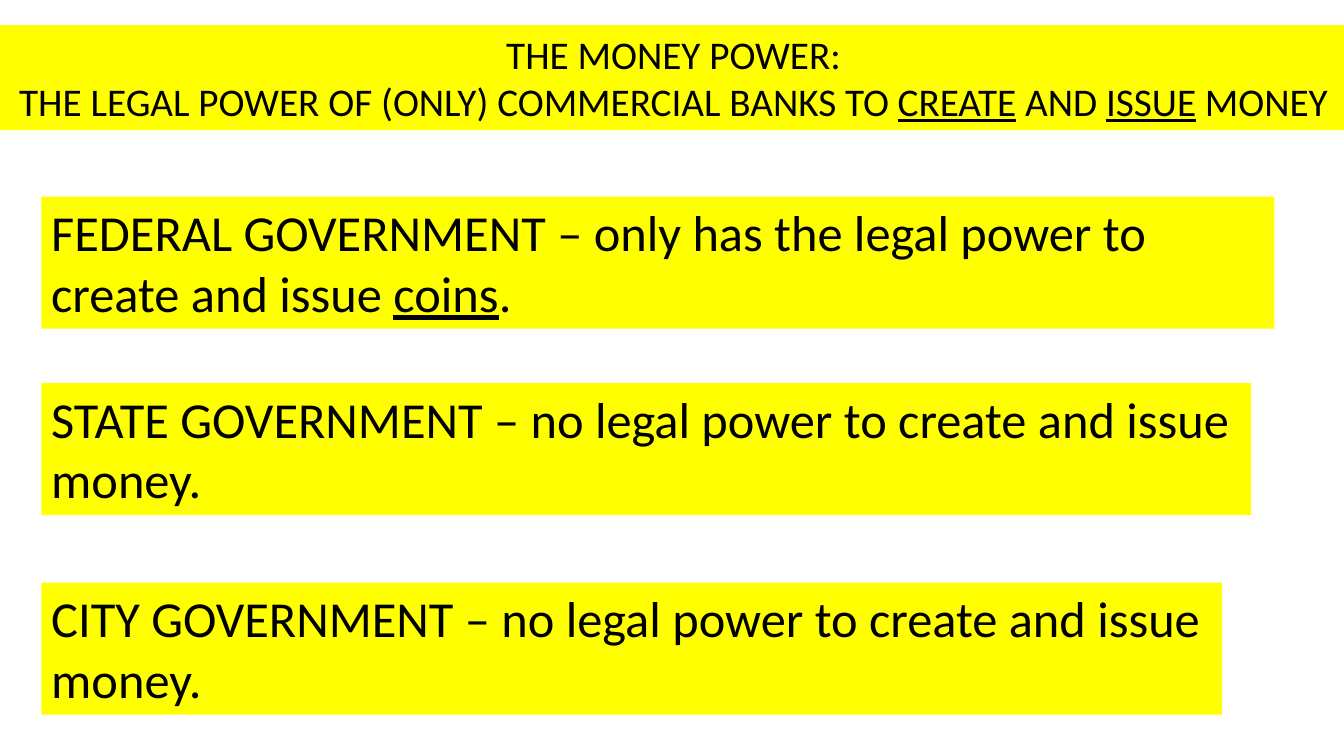
from pptx import Presentation
from pptx.dml.color import RGBColor
from pptx.enum.text import MSO_ANCHOR, MSO_AUTO_SIZE, PP_ALIGN
from pptx.util import Inches, Pt

THEME = {
    "font": "Calibri",
    "text": RGBColor(0, 0, 0),
    "highlight": RGBColor(255, 255, 0),
    "title_size": Pt(28),
    "body_size": Pt(36),
}

# Each paragraph is a list of spans; a span is its text and whether it is underlined.
TITLE = [
    [("THE MONEY POWER:", False)],
    [
        ("THE LEGAL POWER OF (ONLY) COMMERCIAL BANKS TO ", False),
        ("CREATE", True),
        (" AND ", False),
        ("ISSUE", True),
        (" MONEY", False),
    ],
]
FEDERAL = [[
    ("FEDERAL GOVERNMENT – only has the legal power to create and issue ", False),
    ("coins", True),
    (".", False),
]]
STATE, CITY = [
    [[(f"{level} GOVERNMENT – no legal power to create and issue", False)],
     [("money.", False)]]
    for level in ("STATE", "CITY")
]
LEFT, HEIGHT = 0.41, 1.31
# top, width, wraps, paragraphs
GOVERNMENTS = [
    (1.95, 12.23, True, FEDERAL),
    (3.8, 12, False, STATE),
    (5.78, 11.71, False, CITY),
]


def place(box, left, top, width, height):
    """Set the position and size of a box, given in inches."""
    bounds = {"left": left, "top": top, "width": width, "height": height}
    for name, value in bounds.items():
        setattr(box, name, Inches(value))


def write(box, paragraphs, size, align, wrap=True):
    """Fill a box with the highlight colour and its formatted paragraphs."""
    box.fill.solid()
    box.fill.fore_color.rgb = THEME["highlight"]
    frame = box.text_frame
    frame_format = {
        "word_wrap": wrap,
        "auto_size": MSO_AUTO_SIZE.SHAPE_TO_FIT_TEXT,
        "vertical_anchor": MSO_ANCHOR.TOP,
    }
    for name, value in frame_format.items():
        setattr(frame, name, value)
    for index, spans in enumerate(paragraphs):
        para = frame.add_paragraph() if index else frame.paragraphs[0]
        para.alignment = align
        for text, underlined in spans:
            span = para.add_run()
            span.text = text
            span.font.color.rgb = THEME["text"]
            font_format = {"name": THEME["font"], "size": size, "underline": underlined}
            for name, value in font_format.items():
                setattr(span.font, name, value)


deck = Presentation()
deck.slide_width, deck.slide_height = Inches(13.33), Inches(7.5)
slide = deck.slides.add_slide(deck.slide_layouts.get_by_name("Title Only"))

title = slide.shapes.title
place(title, 0, 0.25, 13.36, 1.04)
write(title, TITLE, THEME["title_size"], PP_ALIGN.CENTER)

for top, width, wrap, paragraphs in GOVERNMENTS:
    box = slide.shapes.add_textbox(0, 0, 0, 0)
    place(box, LEFT, top, width, HEIGHT)
    write(box, paragraphs, THEME["body_size"], PP_ALIGN.LEFT, wrap)

deck.save("out.pptx")
